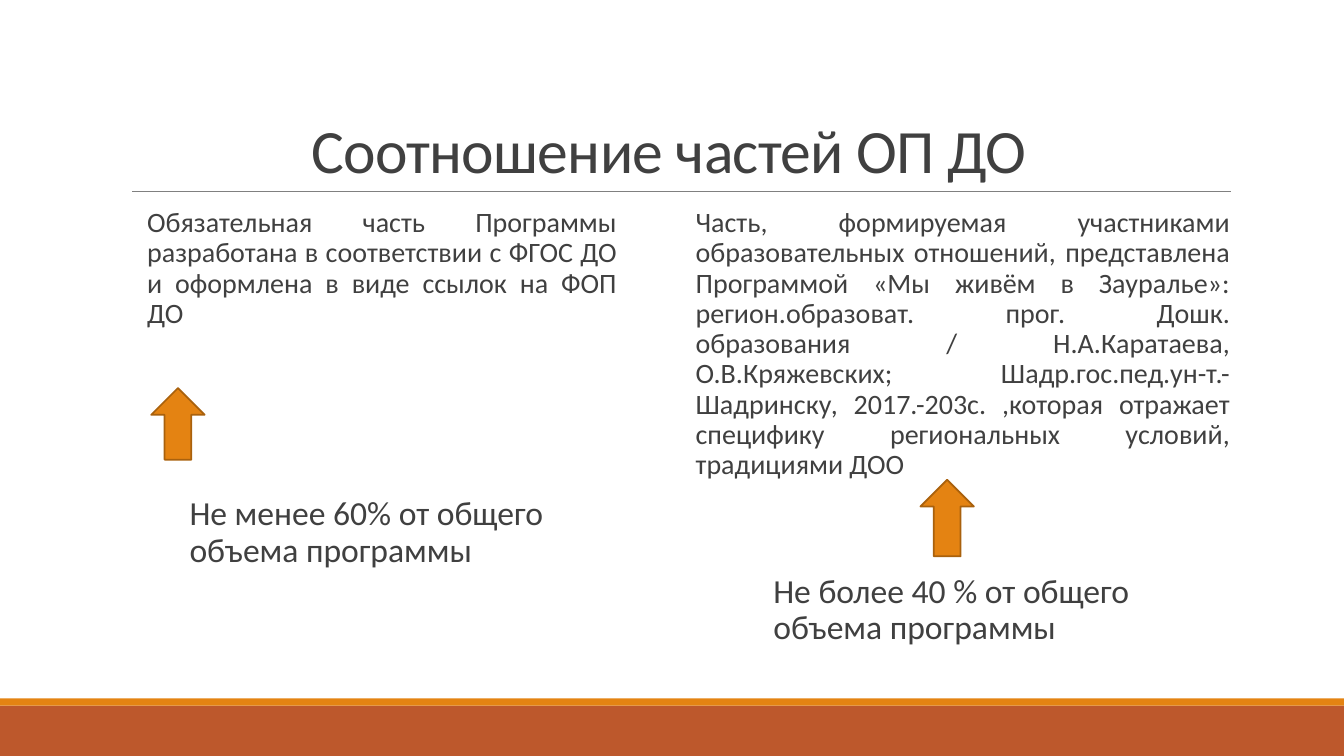
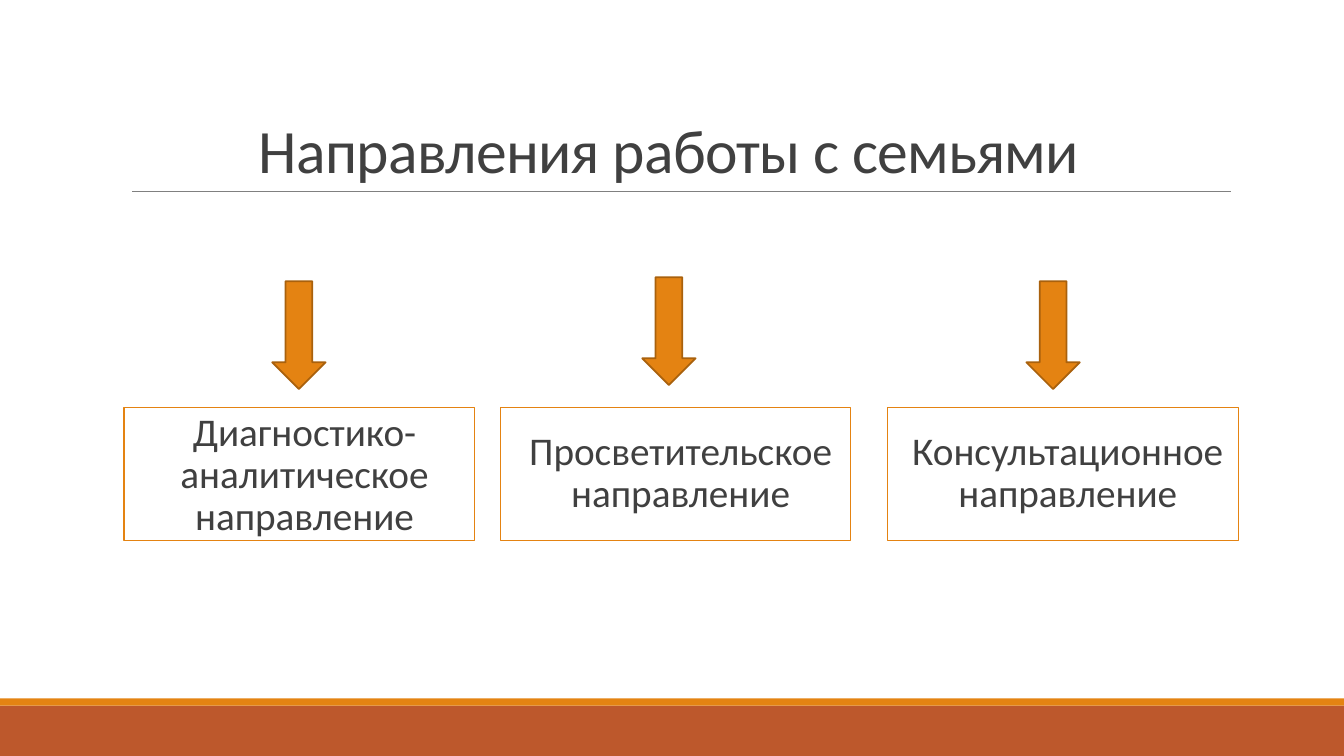
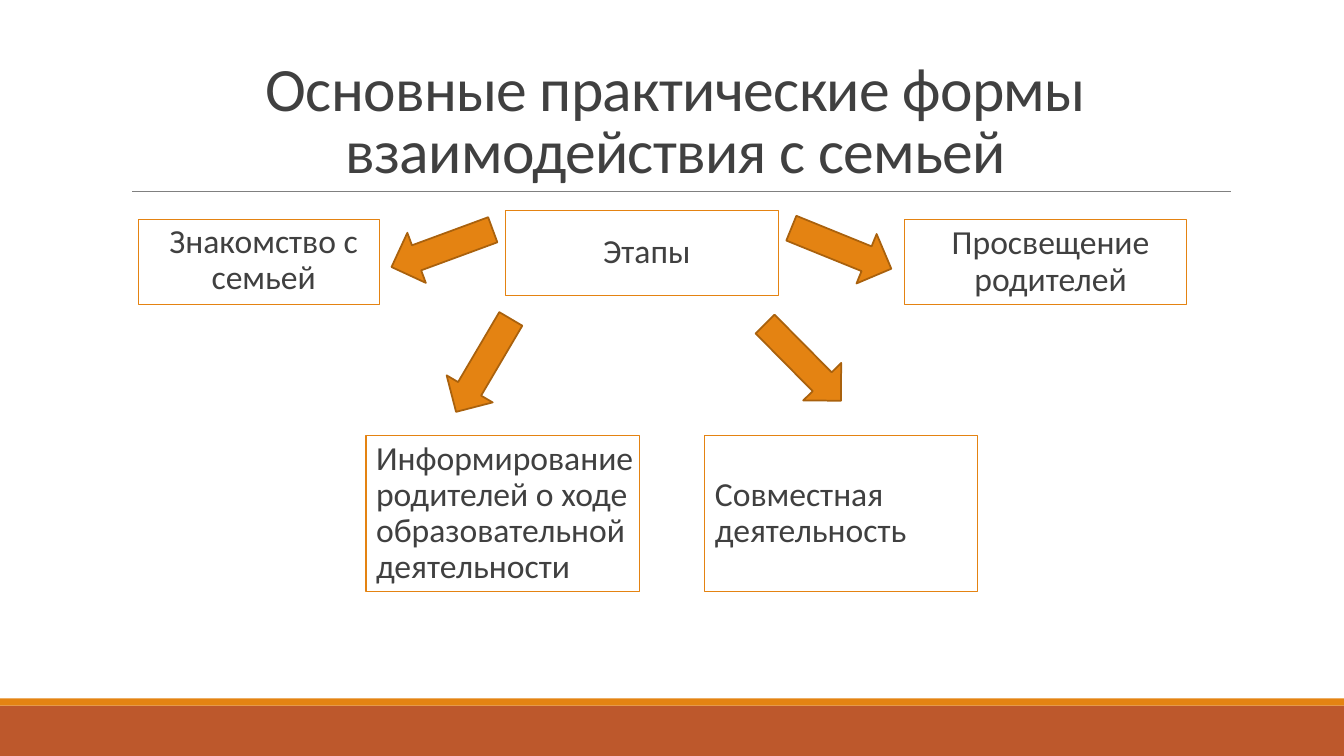
"""Build three slides on the programme structure and work with families."""
import dataclasses

import lxml.etree
import pptx
import pptx.dml.color
import pptx.enum.shapes
import pptx.enum.text
import pptx.oxml.ns
import pptx.util

Inches = pptx.util.Inches
Pt = pptx.util.Pt
Color = pptx.dml.color.RGBColor
Shape = pptx.enum.shapes.MSO_SHAPE
Align = pptx.enum.text.PP_ALIGN
Anchor = pptx.enum.text.MSO_ANCHOR
qn = pptx.oxml.ns.qn


@dataclasses.dataclass(frozen=True)
class Theme:
    font: str = "Calibri"
    text: Color = Color(0x40, 0x40, 0x40)
    accent: Color = Color(0xE4, 0x83, 0x12)
    arrow_edge: Color = Color(0xA9, 0x61, 0x0D)
    band: Color = Color(0xBD, 0x58, 0x2C)
    rule: Color = Color(0x80, 0x80, 0x80)
    title_size: int = 44
    direction_size: int = 28
    body_size: int = 24
    description_size: int = 20


THEME = Theme()


@dataclasses.dataclass(frozen=True)
class TextBlock:
    text: str
    left: float
    top: float
    width: float
    height: float
    size: int = THEME.body_size
    align: Align = Align.LEFT
    anchor: Anchor = Anchor.TOP
    framed: bool = False


@dataclasses.dataclass(frozen=True)
class Arrow:
    left: float
    top: float
    height: float = 1.07
    rotation: float = 0
    kind: Shape = Shape.DOWN_ARROW
    width: float = 0.53


@dataclasses.dataclass(frozen=True)
class SlideContent:
    title: str
    blocks: tuple[TextBlock, ...]
    arrows: tuple[Arrow, ...]


def direction(text: str, left: float, anchor: Anchor = Anchor.MIDDLE) -> TextBlock:
    return TextBlock(text, left, 4.04, 3.48, 1.32, THEME.direction_size, Align.CENTER, anchor, True)


def stage(text: str, left: float, top: float, width: float, anchor: Anchor = Anchor.MIDDLE) -> TextBlock:
    return TextBlock(text, left, top, width, 0.84, align=Align.CENTER, anchor=anchor, framed=True)


def activity(text: str, left: float) -> TextBlock:
    return TextBlock(text, left, 4.32, 2.71, 1.55, anchor=Anchor.MIDDLE, framed=True)


def description(text: str, left: float, width: float, height: float) -> TextBlock:
    return TextBlock(text, left, 2.02, width, height, THEME.description_size, Align.JUSTIFY)


SLIDES = (
    SlideContent(
        "Соотношение частей ОП ДО ",
        (
            description(
                "Обязательная часть Программы разработана в соответствии с ФГОС ДО "
                "и оформлена в виде ссылок на ФОП ДО", 1.36, 4.76, 1.83),
            description(
                "Часть, формируемая участниками образовательных отношений, представлена "
                "Программой «Мы живём в Зауралье»: регион.образоват. прог. Дошк. образования / "
                "Н.А.Каратаева, О.В.Кряжевских; Шадр.гос.пед.ун-т.-Шадринску, 2017.-203с. "
                ",которая отражает специфику региональных условий, традициями ДОО", 6.8, 5.4, 2.63),
            TextBlock("Не менее 60% от общего объема программы", 1.78, 4.88, 4.17, 0.95),
            TextBlock("Не более 40 % от общего объема программы", 7.57, 5.65, 4.17, 0.94),
        ),
        (
            Arrow(1.5, 3.85, 0.71, kind=Shape.UP_ARROW),
            Arrow(9.13, 4.76, 0.76, kind=Shape.UP_ARROW),
        ),
    ),
    SlideContent(
        "Направления работы с семьями ",
        (
            direction("Диагностико-аналитическое направление", 1.23, Anchor.TOP),
            direction("Просветительское направление", 4.96),
            direction("Консультационное направление", 8.8),
        ),
        (Arrow(2.7, 2.79), Arrow(6.37, 2.75), Arrow(10.18, 2.79)),
    ),
    SlideContent(
        "Основные практические формы взаимодействия с семьей",
        (
            stage("Этапы", 5.01, 2.09, 2.71),
            stage("Знакомство с семьей", 1.37, 2.18, 2.39, Anchor.TOP),
            stage("Просвещение родителей", 8.97, 2.18, 2.8),
            activity("Информирование родителей о ходе образовательной деятельности", 3.63),
            activity("Совместная деятельность", 6.99),
        ),
        (
            Arrow(4.12, 1.93, rotation=69.8),
            Arrow(4.53, 3.09, rotation=30.5),
            Arrow(8.08, 1.93, rotation=292.1),
            Arrow(7.7, 3.06, rotation=315.3),
        ),
    ),
)


def add_filled_shape(
    slide: pptx.slide.Slide, kind: Shape, left: float, top: float, width: float, height: float, fill: Color
) -> pptx.shapes.autoshape.Shape:
    shape = slide.shapes.add_shape(kind, Inches(left), Inches(top), Inches(width), Inches(height))
    shape.shadow.inherit = False
    shape.fill.solid()
    shape.fill.fore_color.rgb = fill
    shape.line.fill.background()
    return shape


def write_text(
    shape: pptx.shapes.autoshape.Shape, text: str, size: int, align: Align, anchor: Anchor, line_spacing: float
) -> pptx.text.text._Paragraph:
    frame = shape.text_frame
    frame.text = text
    frame.word_wrap = True
    frame.vertical_anchor = anchor
    paragraph = frame.paragraphs[0]
    paragraph.alignment = align
    paragraph.line_spacing = line_spacing
    font = paragraph.runs[0].font
    font.name = THEME.font
    font.size = Pt(size)
    font.color.rgb = THEME.text
    return paragraph


def add_hanging_bullet(paragraph: pptx.text.text._Paragraph) -> None:
    properties = paragraph._p.get_or_add_pPr()
    properties.set("marL", str(Inches(0.1)))
    properties.set("indent", str(Inches(-0.1)))
    color = lxml.etree.SubElement(properties, qn("a:buClr"))
    lxml.etree.SubElement(color, qn("a:srgbClr")).set("val", str(THEME.accent))
    lxml.etree.SubElement(properties, qn("a:buFont")).set("typeface", THEME.font)
    lxml.etree.SubElement(properties, qn("a:buChar")).set("char", " ")


def add_block(slide: pptx.slide.Slide, block: TextBlock) -> None:
    place = [Inches(value) for value in (block.left, block.top, block.width, block.height)]
    if block.framed:
        shape = slide.shapes.add_shape(Shape.RECTANGLE, *place)
        shape.shadow.inherit = False
        shape.fill.background()
        shape.line.color.rgb = THEME.accent
        shape.line.width = Pt(0.75)
    else:
        shape = slide.shapes.add_textbox(*place)
    paragraph = write_text(shape, block.text, block.size, block.align, block.anchor, 0.9)
    shape.text_frame.margin_left = shape.text_frame.margin_right = 0
    paragraph.space_before = Pt(12)
    paragraph.space_after = Pt(2)
    add_hanging_bullet(paragraph)


def add_arrow(slide: pptx.slide.Slide, arrow: Arrow) -> None:
    shape = add_filled_shape(
        slide, arrow.kind, arrow.left, arrow.top, arrow.width, arrow.height, THEME.accent)
    shape.line.color.rgb = THEME.arrow_edge
    shape.line.width = Pt(1.25)
    shape.rotation = arrow.rotation


def add_frame(slide: pptx.slide.Slide, title: str) -> None:
    add_filled_shape(slide, Shape.RECTANGLE, 0, 7, 13.33, 0.5, THEME.band)
    add_filled_shape(slide, Shape.RECTANGLE, 0, 6.93, 13.33, 0.07, THEME.accent)
    rule = slide.shapes.add_connector(
        pptx.enum.shapes.MSO_CONNECTOR.STRAIGHT, Inches(1.31), Inches(1.9), Inches(12.21), Inches(1.9))
    rule.line.color.rgb = THEME.rule
    rule.line.width = Pt(0.5)
    lxml.etree.SubElement(rule._element.spPr, qn("a:effectLst"))
    heading = slide.shapes.add_textbox(Inches(1.2), Inches(0.31), Inches(11), Inches(1.59))
    paragraph = write_text(heading, title, THEME.title_size, Align.CENTER, Anchor.BOTTOM, 0.85)
    paragraph.runs[0]._r.get_or_add_rPr().set("spc", "-50")


def main() -> None:
    presentation = pptx.Presentation()
    presentation.slide_width = Inches(13.33)
    presentation.slide_height = Inches(7.5)
    for content in SLIDES:
        slide = presentation.slides.add_slide(presentation.slide_layouts[6])
        add_frame(slide, content.title)
        for block in content.blocks:
            add_block(slide, block)
        for arrow in content.arrows:
            add_arrow(slide, arrow)
    presentation.save("out.pptx")


if __name__ == "__main__":
    main()
